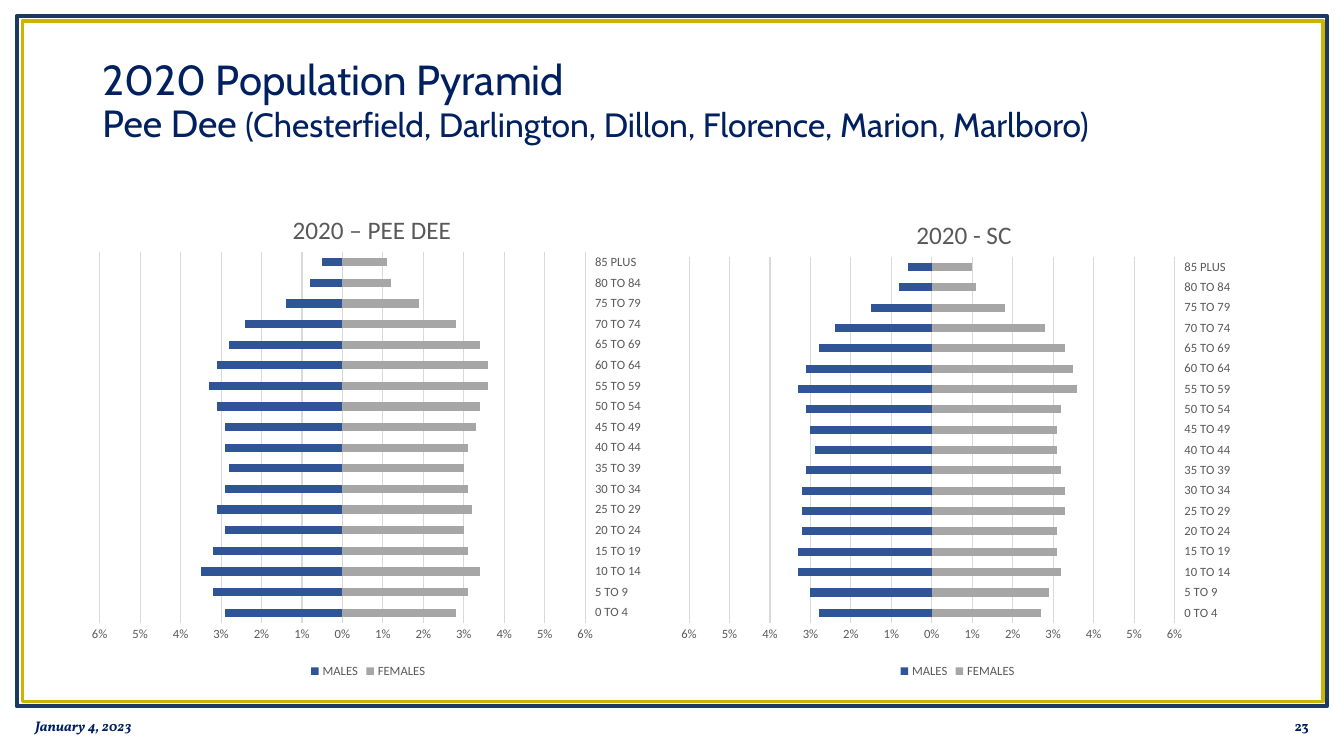
from dataclasses import dataclass

import pptx
import pptx.chart.data
import pptx.dml.color
import pptx.enum.chart
import pptx.enum.shapes
import pptx.enum.text
import pptx.oxml
import pptx.oxml.ns
import pptx.util

Pt = pptx.util.Pt
NAVY, GREY, GRID = "002060", "595959", "D9D9D9"
AGES = [f"{a} TO {a + 4}" for a in range(0, 85, 5)] + ["85 PLUS"]
SERIES_COLORS = {"MALES": "2F5597", "FEMALES": "A6A6A6"}


@dataclass
class Frame:
    x: float
    y: float
    w: float
    h: float
    color: str
    weight: float


@dataclass
class Footer:
    text: str
    x: float
    align: pptx.enum.text.PP_ALIGN
    italic: bool


@dataclass
class Pyramid:
    """Shares are in tenths of a percent, youngest group first."""
    title: str
    x: float
    title_at: tuple[float, float]
    plot_y: float
    plot_h: float
    males: list[int]
    females: list[int]


FRAMES = [
    Frame(12, 11.5, 936, 493, "1C3961", 3),
    Frame(16, 15, 929, 486, "CCB400", 2.5),
]
FOOTERS = [
    Footer("January 4, 2023", 18, pptx.enum.text.PP_ALIGN.LEFT, True),
    Footer("23", 726, pptx.enum.text.PP_ALIGN.RIGHT, False),
]
TITLE_RUNS = [
    ("2020 Population Pyramid", 30),
    ("Pee Dee ", 27),
    ("(Chesterfield, Darlington, Dillon, Florence, Marion, Marlboro)", 24),
]
PYRAMIDS = [
    Pyramid("2020 – PEE DEE", 59, (0.36, 0.04), 0.13, 0.75,
            [29, 32, 35, 32, 29, 31, 29, 28, 29, 29, 31, 33, 31, 28, 24, 14, 8, 5],
            [28, 31, 34, 31, 30, 32, 31, 30, 31, 33, 34, 36, 36, 34, 28, 19, 12, 11]),
    Pyramid("2020 - SC", 480, (0.42, 0.05), 0.14, 0.74,
            [28, 30, 33, 33, 32, 32, 32, 31, 29, 30, 31, 33, 31, 28, 24, 15, 8, 6],
            [27, 29, 32, 31, 31, 33, 33, 32, 31, 31, 32, 36, 35, 33, 28, 18, 11, 10]),
]


def rgb(color: str) -> pptx.dml.color.RGBColor:
    return pptx.dml.color.RGBColor.from_string(color)


def set_font(font, name: str, size: float, color: str, bold: bool = False) -> None:
    font.name = name
    font.size = Pt(size)
    font.bold = bold
    font.color.rgb = rgb(color)


def add_frame(s, frame: Frame) -> None:
    sp = s.shapes.add_shape(pptx.enum.shapes.MSO_SHAPE.RECTANGLE,
                            Pt(frame.x), Pt(frame.y), Pt(frame.w), Pt(frame.h))
    sp.shadow.inherit = False
    sp.fill.background()
    sp.line.color.rgb = rgb(frame.color)
    sp.line.width = Pt(frame.weight)


def add_footer(s, footer: Footer) -> None:
    tf = s.shapes.add_textbox(Pt(footer.x), Pt(504), Pt(216), Pt(29)).text_frame
    tf.word_wrap = True
    tf.vertical_anchor = pptx.enum.text.MSO_ANCHOR.MIDDLE
    tf.text = footer.text
    p = tf.paragraphs[0]
    p.alignment = footer.align
    font = p.runs[0].font
    set_font(font, "Vollkorn", 10, NAVY, True)
    font.italic = footer.italic


def fill_title(s) -> None:
    sp = s.shapes.title
    sp.left, sp.top, sp.width, sp.height = Pt(66), Pt(29), Pt(828), Pt(88.5)
    tf = sp.text_frame
    tf.vertical_anchor = pptx.enum.text.MSO_ANCHOR.MIDDLE
    p = tf.paragraphs[0]
    p.alignment = pptx.enum.text.PP_ALIGN.LEFT
    p.line_spacing = 0.9
    for i, (text, size) in enumerate(TITLE_RUNS):
        if i == 1:
            p.add_line_break()
        r = p.add_run()
        r.text = text
        set_font(r.font, "Cabin", size, NAVY)


def manual_layout(target: str, **fractions: float):
    """Layout element placing a chart part by fractions of the chart area."""
    inner = '<c:layoutTarget val="inner"/>' if target == "plot" else ""
    modes = "".join(f'<c:{k}Mode val="edge"/>' for k in ("x", "y"))
    values = "".join(f'<c:{k} val="{v}"/>' for k, v in fractions.items())
    return pptx.oxml.parse_xml(
        f'<c:layout {pptx.oxml.ns.nsdecls("c")}><c:manualLayout>'
        f"{inner}{modes}{values}</c:manualLayout></c:layout>")


def replace_layout(parent, layout, index: int) -> None:
    for old in parent.findall(pptx.oxml.ns.qn("c:layout")):
        parent.remove(old)
    parent.insert(index, layout)


def format_axes(chart) -> None:
    cat, val = chart.category_axis, chart.value_axis
    for axis in (cat, val):
        axis.major_tick_mark = pptx.enum.chart.XL_TICK_MARK.NONE
        axis.minor_tick_mark = pptx.enum.chart.XL_TICK_MARK.NONE
        set_font(axis.tick_labels.font, "Calibri", 9, GREY)
    cat.tick_label_position = pptx.enum.chart.XL_TICK_LABEL_POSITION.HIGH
    cat.format.line.color.rgb = rgb(GRID)
    cat.format.line.width = Pt(0.75)
    val.minimum_scale, val.maximum_scale, val.major_unit = -0.06, 0.06, 0.01
    val.tick_labels.number_format = "0%;0%"
    val.tick_labels.number_format_is_linked = False
    val.format.line.fill.background()
    val.has_major_gridlines = True
    val.major_gridlines.format.line.color.rgb = rgb(GRID)
    val.major_gridlines.format.line.width = Pt(0.75)


def add_pyramid(s, pyramid: Pyramid) -> None:
    data = pptx.chart.data.CategoryChartData(number_format="0.0%")
    data.categories = AGES
    data.add_series("MALES", [-v / 1000 for v in pyramid.males])
    data.add_series("FEMALES", [v / 1000 for v in pyramid.females])
    chart = s.shapes.add_chart(pptx.enum.chart.XL_CHART_TYPE.BAR_STACKED,
                               Pt(pyramid.x), Pt(134), Pt(408), Pt(353.5), data).chart
    set_font(chart.font, "Calibri", 10, "000000")

    tf = chart.chart_title.text_frame
    tf.text = pyramid.title
    set_font(tf.paragraphs[0].runs[0].font, "Calibri", 18, GREY)
    chart.chart_title.include_in_layout = False
    x, y = pyramid.title_at
    c = pptx.oxml.ns.qn
    replace_layout(chart.element.find(".//" + c("c:title")), manual_layout("title", x=x, y=y), 1)
    replace_layout(chart.element.find(".//" + c("c:plotArea")),
                   manual_layout("plot", x=0.03, y=pyramid.plot_y, w=0.85, h=pyramid.plot_h), 0)

    plot = chart.plots[0]
    plot.gap_width, plot.overlap, plot.vary_by_categories = 150, 100, False
    for series in plot.series:
        series.invert_if_negative = False
        series.format.fill.solid()
        series.format.fill.fore_color.rgb = rgb(SERIES_COLORS[series.name])
    format_axes(chart)
    chart.has_legend = True
    chart.legend.position = pptx.enum.chart.XL_LEGEND_POSITION.BOTTOM
    chart.legend.include_in_layout = False
    set_font(chart.legend.font, "Calibri", 9, GREY)


def main() -> None:
    prs = pptx.Presentation()
    prs.slide_width, prs.slide_height = Pt(960), Pt(540)
    s = prs.slides.add_slide(prs.slide_layouts[5])
    for frame in FRAMES:
        add_frame(s, frame)
    fill_title(s)
    for footer in FOOTERS:
        add_footer(s, footer)
    for pyramid in PYRAMIDS:
        add_pyramid(s, pyramid)
    prs.save("out.pptx")


if __name__ == "__main__":
    main()
